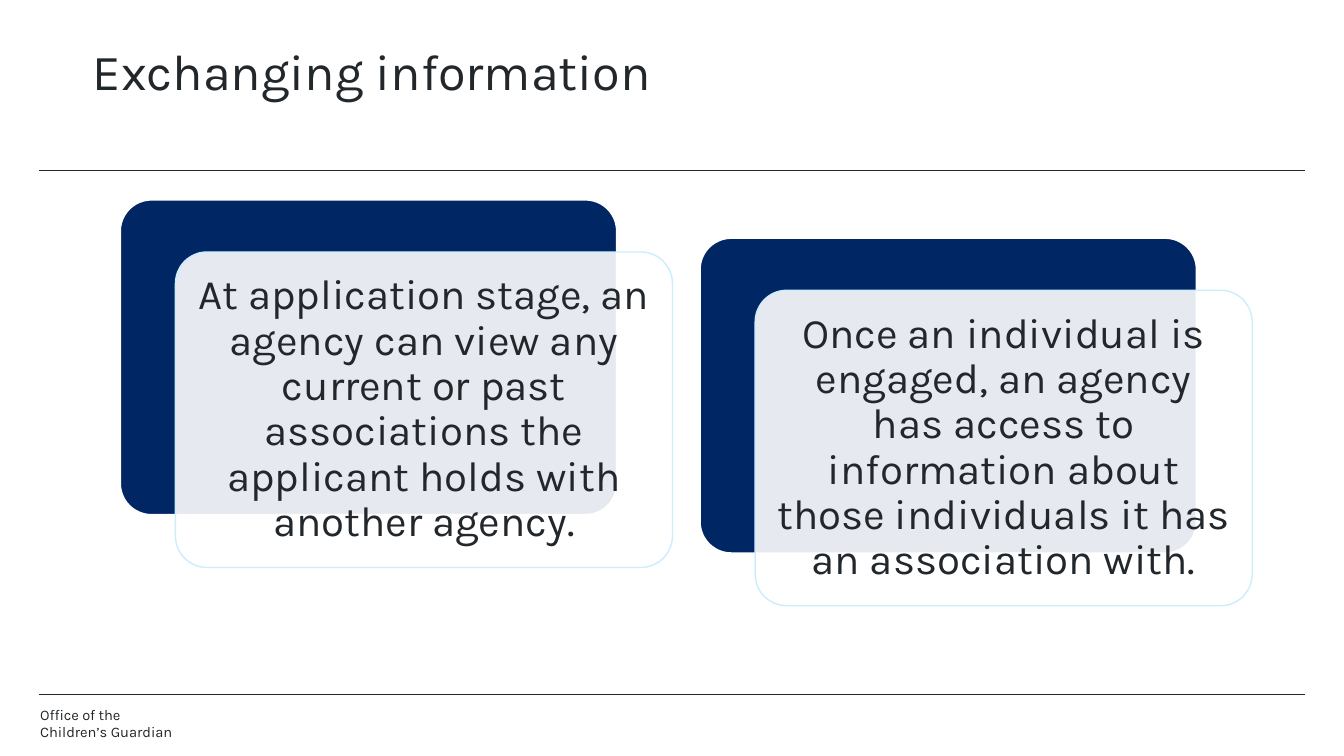
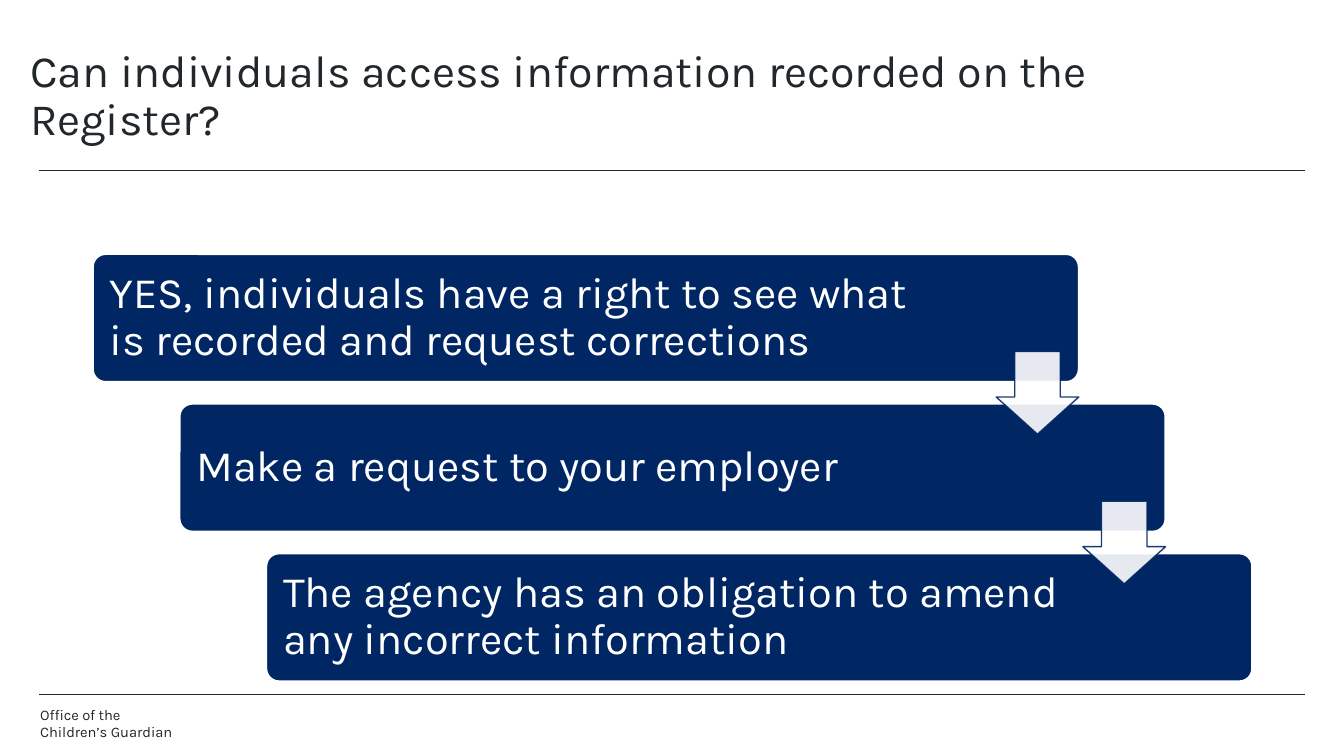
from dataclasses import dataclass

from lxml import etree
from pptx import Presentation
from pptx.dml.color import RGBColor
from pptx.enum.shapes import MSO_CONNECTOR, MSO_SHAPE
from pptx.enum.text import MSO_ANCHOR, MSO_AUTO_SIZE, PP_ALIGN
from pptx.oxml.ns import qn
from pptx.util import Inches, Pt

ROUNDED = MSO_SHAPE.ROUNDED_RECTANGLE
DOWN_ARROW = MSO_SHAPE.DOWN_ARROW
STRAIGHT = MSO_CONNECTOR.STRAIGHT
MIDDLE = MSO_ANCHOR.MIDDLE
LEFT, CENTER = PP_ALIGN.LEFT, PP_ALIGN.CENTER
NO_FIT, GROW = MSO_AUTO_SIZE.NONE, MSO_AUTO_SIZE.SHAPE_TO_FIT_TEXT
TITLE_ONLY = 5


@dataclass(frozen=True)
class Theme:
    font: str = "Karla"
    ink: str = "22272B"
    navy: str = "002664"
    white: str = "FFFFFF"
    pale_blue: str = "CBEDFD"
    card_size: float = 30
    step_size: float = 31
    footer_size: float = 10.5
    line_spacing: float = 0.9
    opacity: int = 90


THEME = Theme()


def format_text(text_frame, size, color, align=LEFT, line_spacing=THEME.line_spacing):
    text_frame.word_wrap = True
    for paragraph in text_frame.paragraphs:
        paragraph.alignment = align
        paragraph.line_spacing = line_spacing
        for run in paragraph.runs:
            run.font.name = THEME.font
            run.font.size = Pt(size)
            run.font.color.rgb = RGBColor.from_string(color)


def set_margins(text_frame, margin, right=None):
    text_frame.margin_left = text_frame.margin_top = text_frame.margin_bottom = Inches(margin)
    text_frame.margin_right = Inches(margin if right is None else right)


def add_panel(slide, preset, box, fill, line, line_width, adjustments=(0.1,)):
    shape = slide.shapes.add_shape(preset, *map(Inches, box))
    shape.shadow.inherit = False
    shape.fill.solid()
    shape.fill.fore_color.rgb = RGBColor.from_string(fill)
    shape.line.color.rgb = RGBColor.from_string(line)
    shape.line.width = Pt(line_width)
    for index, value in enumerate(adjustments):
        shape.adjustments[index] = value
    return shape


def make_translucent(properties):
    """Apply the theme opacity to the solid fill directly inside the given element."""
    color = properties.find(qn("a:solidFill")).find(qn("a:srgbClr"))
    etree.SubElement(color, qn("a:alpha")).set("val", str(THEME.opacity * 1000))


def add_rule(slide, top):
    rule = slide.shapes.add_connector(
        STRAIGHT, Inches(0.39), Inches(top), Inches(12.94), Inches(top))
    rule.line.color.rgb = RGBColor.from_string(THEME.ink)
    rule.line.width = Pt(0.5)
    etree.SubElement(rule._element.spPr, qn("a:effectLst"))


def add_footer(slide, box):
    footer = slide.shapes.add_textbox(*map(Inches, box))
    text_frame = footer.text_frame
    text_frame.text = "Office of the\vChildren’s Guardian"
    text_frame.auto_size = GROW
    format_text(text_frame, THEME.footer_size, THEME.ink, line_spacing=1.0)


def add_base_slide(presentation, title_text, title_box, title_size):
    """Add a slide with its title, the two rules and the footer."""
    slide = presentation.slides.add_slide(presentation.slide_layouts[TITLE_ONLY])
    title = slide.shapes.title
    title.left, title.top, title.width, title.height = map(Inches, title_box)
    text_frame = title.text_frame
    text_frame.text = title_text
    text_frame.auto_size = NO_FIT
    text_frame.vertical_anchor = MIDDLE
    set_margins(text_frame, 0)
    format_text(text_frame, title_size, THEME.ink)
    for top in (1.69, 6.89):
        add_rule(slide, top)
    add_footer(slide, (0.3, 6.95, 6.47, 0.45))
    return slide


def add_card(slide, box, text):
    """Add a navy panel with a translucent text panel shifted over it."""
    left, top, width, height = box
    shift_x, shift_y = 0.55, 0.52
    panel_width, panel_height = width - shift_x, height - shift_y
    add_panel(slide, ROUNDED, (left, top, panel_width, panel_height),
              THEME.navy, THEME.white, 1.5)
    front = add_panel(slide, ROUNDED,
                      (left + shift_x, top + shift_y, panel_width, panel_height),
                      THEME.white, THEME.pale_blue, 1)
    make_translucent(front._element.spPr)
    text_frame = front.text_frame
    text_frame.text = text
    text_frame.vertical_anchor = MIDDLE
    set_margins(text_frame, 0.12)
    format_text(text_frame, THEME.card_size, THEME.ink, CENTER)


def add_cards(slide, box, texts):
    """Spread cards evenly from the top left to the bottom right of the box."""
    left, top, width, height = box
    card_width, card_height = 5.48, 3.65
    gaps = len(texts) - 1
    pitch_x, pitch_y = (width - card_width) / gaps, (height - card_height) / gaps
    for index, text in enumerate(texts):
        add_card(slide, (left + index * pitch_x, top + index * pitch_y,
                         card_width, card_height), text)


def add_staircase(slide, box, texts):
    """Spread steps diagonally over the box, with an arrow across each gap."""
    left, top, width, height = box
    step_width, step_height, arrow_side = 9.78, 1.27, 0.82
    gaps = len(texts) - 1
    pitch_x, pitch_y = (width - step_width) / gaps, (height - step_height) / gaps
    for index, text in enumerate(texts):
        step = add_panel(slide, ROUNDED,
                         (left + index * pitch_x, top + index * pitch_y,
                          step_width, step_height),
                         THEME.navy, THEME.white, 1.5)
        text_frame = step.text_frame
        text_frame.text = text
        text_frame.vertical_anchor = MIDDLE
        set_margins(text_frame, 0.13, right=1.43)
        format_text(text_frame, THEME.step_size, THEME.white)
    for index in range(gaps):
        gap_middle = top + index * pitch_y + (step_height + pitch_y) / 2
        arrow = add_panel(slide, DOWN_ARROW,
                          (left + index * pitch_x + step_width - arrow_side,
                           gap_middle - arrow_side / 2, arrow_side, arrow_side),
                          THEME.white, THEME.navy, 1, (0.55, 0.45))
        # python-pptx lists the arrow's head width first and its head length second.
        arrow.adjustments[0], arrow.adjustments[1] = 0.55, 0.45
        properties = arrow._element.spPr
        make_translucent(properties)
        make_translucent(properties.find(qn("a:ln")))


def build_exchange_slide(presentation):
    slide = add_base_slide(presentation, "Exchanging information",
                           (0.92, 0.22, 11.5, 1.04), 36)
    add_cards(slide, (1.19, 1.98, 11.23, 4.03), (
        "At application stage, an agency can view any current or past associations "
        "the applicant holds with another agency.",
        "Once an individual is engaged, an agency has access to information about "
        "those individuals it has an association with.",
    ))


def build_access_slide(presentation):
    slide = add_base_slide(
        presentation, "Can individuals access information recorded on the Register?",
        (0.3, 0.32, 11.72, 1.28), 32)
    add_staircase(slide, (0.92, 2.52, 11.5, 4.24), (
        "YES, individuals have a right to see what is recorded and request corrections",
        "Make a request to your employer",
        "The agency has an obligation to amend any incorrect information",
    ))


def main():
    presentation = Presentation()
    presentation.slide_width = Inches(13.33)
    presentation.slide_height = Inches(7.5)
    build_exchange_slide(presentation)
    build_access_slide(presentation)
    presentation.save("out.pptx")


if __name__ == "__main__":
    main()
